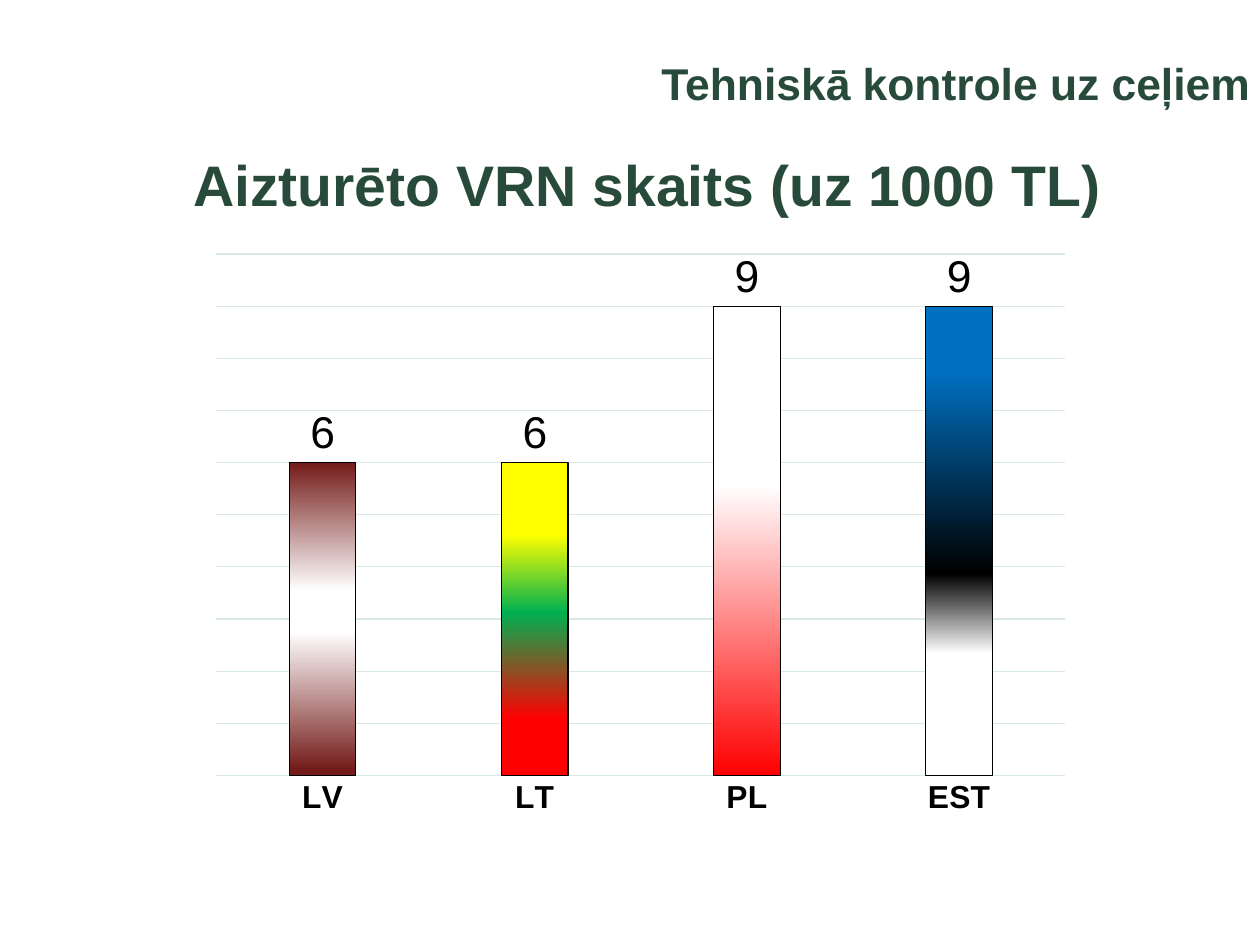
from dataclasses import dataclass

from lxml.etree import SubElement
from pptx import Presentation
from pptx.chart.data import CategoryChartData
from pptx.dml.color import RGBColor
from pptx.enum.chart import XL_CHART_TYPE, XL_LABEL_POSITION, XL_TICK_MARK
from pptx.enum.text import MSO_ANCHOR, PP_ALIGN
from pptx.oxml.ns import qn
from pptx.util import Inches, Pt


@dataclass(frozen=True)
class Theme:
    """Colours, typeface and type sizes of the slide."""

    face: str = "Arial"
    green: str = "284A3A"
    grid: str = "D8EAE2"
    ink: str = "000000"
    title_size: int = 36
    topic_size: int = 28
    value_size: int = 28
    country_size: int = 20
    base_size: int = 10
    hairline: float = 0.75


COUNTRIES = {
    "LV": (6, [(0, "741C1A"), (41, "FFFFFF"), (54, "FFFFFF"), (98, "741C1A")]),
    "LT": (6, [(23, "FFFF00"), (48, "00B050"), (82, "FF0000")]),
    "PL": (9, [(38, "FFFFFF"), (100, "FF0000")]),
    "EST": (9, [(14, "0070C0"), (57, "000000"), (74, "FFFFFF")]),
}
SERIES_STOPS = [(0, "F2F8F5"), (27, "FFFF00"), (60, "00B050"), (100, "FF0000")]
PLOT_AREA = {"x": 0.02, "y": 0.02, "w": 0.96, "h": 0.89}


def style_font(font, face, size, color, bold=False):
    """Apply typeface, size, colour and weight to a font."""
    font.name = face
    font.size = Pt(size)
    font.bold = bold
    font.color.rgb = RGBColor.from_string(color)


def style_line(line, color, width):
    """Draw a line in one colour and width."""
    line.color.rgb = RGBColor.from_string(color)
    line.width = Pt(width)


def fill_downwards(fill, stops):
    """Fill with a top-to-bottom gradient of (percent, colour) stops."""
    fill.gradient()
    fill.gradient_angle = 270
    stop_list = fill._xPr.find(qn("a:gradFill")).find(qn("a:gsLst"))
    for default_stop in list(stop_list):
        stop_list.remove(default_stop)
    for percent, color in stops:
        stop = SubElement(stop_list, qn("a:gs"), pos=str(percent * 1000))
        SubElement(stop, qn("a:srgbClr"), val=color)


def place_plot(chart, area):
    """Fix the inner plot area as fractions of the chart."""
    plot_area = chart._chartSpace.chart.plotArea
    layout = plot_area.find(qn("c:layout"))
    if layout is None:
        layout = plot_area.makeelement(qn("c:layout"))
        plot_area.insert(0, layout)
    manual = SubElement(layout, qn("c:manualLayout"))
    SubElement(manual, qn("c:layoutTarget"), val="inner")
    for side in ("x", "y"):
        SubElement(manual, qn(f"c:{side}Mode"), val="edge")
    for side, fraction in area.items():
        SubElement(manual, qn(f"c:{side}"), val=str(fraction))


class SlideBuilder:
    """Adds themed elements to the current slide."""

    def __init__(self, slide, theme):
        """Keep the slide and its theme."""
        self.slide = slide
        self.theme = theme

    def text(self, wording, box, *, size, align, space_after=0):
        """Add a bold heading in a box of left, top, width and height."""
        frame = self.slide.shapes.add_textbox(*map(Inches, box)).text_frame
        frame.word_wrap = True
        frame.vertical_anchor = MSO_ANCHOR.MIDDLE
        frame.margin_left = frame.margin_right = Inches(0.11)
        frame.margin_top = frame.margin_bottom = Inches(0.06)
        paragraph = frame.paragraphs[0]
        paragraph.alignment = align
        paragraph.space_after = Pt(space_after)
        run = paragraph.add_run()
        run.text = wording
        style_font(run.font, self.theme.face, size, self.theme.green, bold=True)

    def column_chart(self, countries, box):
        """Add a column chart with one flag-coloured column per country."""
        theme = self.theme
        data = CategoryChartData(number_format="0")
        data.categories = list(countries)
        data.add_series("Series 1", [value for value, _ in countries.values()])
        chart = self.slide.shapes.add_chart(
            XL_CHART_TYPE.COLUMN_CLUSTERED, *map(Inches, box), data
        ).chart
        chart.has_legend = False
        chart.has_title = False
        style_font(chart.font, theme.face, theme.base_size, theme.green)
        place_plot(chart, PLOT_AREA)
        self.axes(chart)

        plot = chart.plots[0]
        plot.gap_width = 219
        plot.overlap = -27
        plot.vary_by_categories = False
        series = plot.series[0]
        columns = [(series, SERIES_STOPS)]
        for index, (_, stops) in enumerate(countries.values()):
            columns.append((series.points[index], stops))
        for column, stops in columns:
            fill_downwards(column.format.fill, stops)
            style_line(column.format.line, theme.ink, theme.hairline)

        labels = series.data_labels
        labels.show_value = True
        labels.number_format = "0"
        labels.number_format_is_linked = False
        labels.position = XL_LABEL_POSITION.OUTSIDE_END
        style_font(labels.font, theme.face, theme.value_size, theme.ink)

    def axes(self, chart):
        """Style the country axis and the hidden value axis."""
        theme = self.theme
        country_axis = chart.category_axis
        country_axis.major_tick_mark = XL_TICK_MARK.NONE
        style_line(country_axis.format.line, theme.grid, theme.hairline)
        style_font(country_axis.tick_labels.font, theme.face,
                   theme.country_size, theme.ink, bold=True)
        value_axis = chart.value_axis
        value_axis.minimum_scale = 0
        value_axis.maximum_scale = 10
        value_axis.major_unit = 1
        value_axis.has_major_gridlines = True
        style_line(value_axis.major_gridlines.format.line,
                   theme.grid, theme.hairline)
        value_axis.visible = False


def main():
    """Build and save the slide."""
    presentation = Presentation()
    presentation.slide_width = Inches(11.03)
    presentation.slide_height = Inches(8.27)
    theme = Theme()
    slide = presentation.slides.add_slide(presentation.slide_layouts[6])
    builder = SlideBuilder(slide, theme)
    builder.text("Aizturēto VRN skaits (uz 1000 TL)", (0.83, 1.15, 9.67, 0.92),
                 size=theme.title_size, align=PP_ALIGN.CENTER, space_after=12)
    builder.text("Tehniskā kontrole uz ceļiem", (1.45, 0.34, 9.6, 0.77),
                 size=theme.topic_size, align=PP_ALIGN.RIGHT)
    builder.column_chart(COUNTRIES, (1.74, 2.12, 7.74, 5.13))
    presentation.save("out.pptx")


if __name__ == "__main__":
    main()
